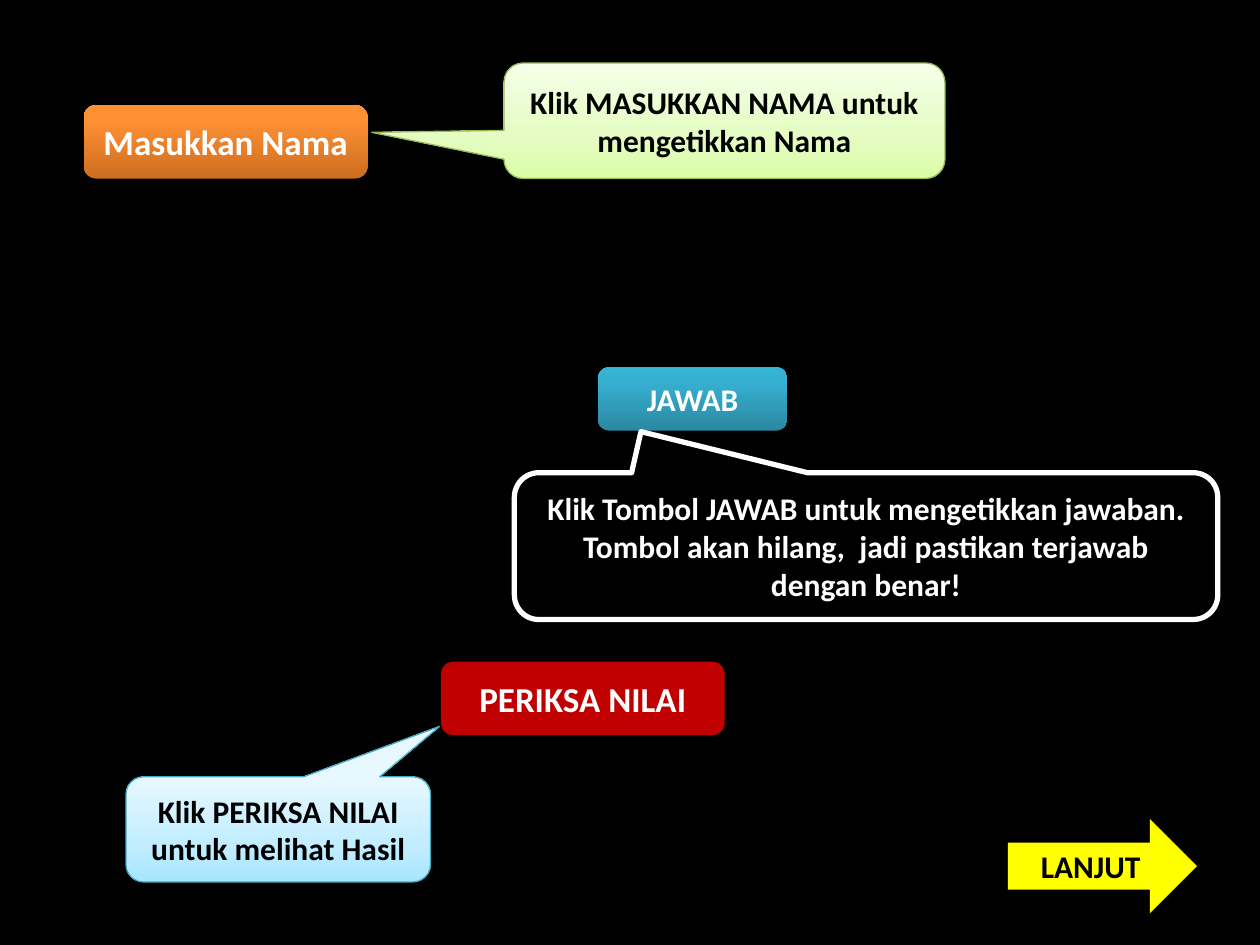
from copy import deepcopy

from pptx import Presentation
from pptx.dml.color import RGBColor
from pptx.enum import shapes, text
from pptx.oxml import ns
from pptx.util import Cm, Pt

BLACK = RGBColor(0x00, 0x00, 0x00)
WHITE = RGBColor(0xFF, 0xFF, 0xFF)
RED = RGBColor(0xC0, 0x00, 0x00)
YELLOW = RGBColor(0xFF, 0xFF, 0x00)
GREEN_EDGE = RGBColor(0x98, 0xB9, 0x55)
BLUE_EDGE = RGBColor(0x46, 0xAA, 0xC5)

TEAL_FADE = [(0, RGBColor(0x2A, 0x88, 0xA2)),
             (0.8, RGBColor(0x37, 0xB1, 0xD2)),
             (1, RGBColor(0x34, 0xB4, 0xD6))]
ORANGE_FADE = [(0, RGBColor(0xCC, 0x6E, 0x20)),
               (0.8, RGBColor(0xFF, 0x90, 0x34)),
               (1, RGBColor(0xFF, 0x91, 0x36))]
GREEN_FADE = [(0, RGBColor(0xDA, 0xFD, 0xA7)),
              (0.35, RGBColor(0xE4, 0xFC, 0xC2)),
              (1, RGBColor(0xF5, 0xFF, 0xE7))]
BLUE_FADE = [(0, RGBColor(0xA7, 0xE6, 0xFF)),
             (0.35, RGBColor(0xC1, 0xED, 0xFF)),
             (1, RGBColor(0xE7, 0xF8, 0xFF))]

FONT = "Calibri"


def paint(shape, colour):
    if isinstance(colour, RGBColor):
        shape.fill.solid()
        shape.fill.fore_color.rgb = colour
        return
    shape.fill.gradient()
    shape.fill.gradient_angle = 90
    stop_list = next(shape._element.spPr.iter(ns.qn("a:gsLst")))
    stop_list.append(deepcopy(stop_list[-1]))
    for stop, (position, shade) in zip(shape.fill.gradient_stops, colour):
        stop.position = position
        stop.color.rgb = shade


def add_label(slide, kind, box, wording, colour, ink, size=18):
    label = slide.shapes.add_shape(kind, *(Cm(length) for length in box))
    label.shadow.inherit = False
    label.line.fill.background()
    paint(label, colour)
    frame = label.text_frame
    frame.word_wrap = True
    frame.vertical_anchor = text.MSO_ANCHOR.MIDDLE
    frame.text = wording
    paragraph = frame.paragraphs[0]
    paragraph.alignment = text.PP_ALIGN.CENTER
    font = paragraph.runs[0].font
    font.name = FONT
    font.size = Pt(size)
    font.bold = True
    font.color.rgb = ink
    return label


def add_button(slide, box, wording, colour, size):
    add_label(slide, shapes.MSO_SHAPE.ROUNDED_RECTANGLE, box, wording,
              colour, WHITE, size)


def add_callout(slide, box, tip, wording, colour, ink, edge, width=0.75):
    callout = add_label(slide, shapes.MSO_SHAPE.ROUNDED_RECTANGULAR_CALLOUT,
                        box, wording, colour, ink)
    callout.adjustments[0], callout.adjustments[1] = tip
    callout.line.color.rgb = edge
    callout.line.width = Pt(width)


def main():
    deck = Presentation()
    deck.slide_width, deck.slide_height = Cm(25.4), Cm(19.05)
    slide = deck.slides.add_slide(deck.slide_layouts[6])
    slide.background.fill.solid()
    slide.background.fill.fore_color.rgb = BLACK

    add_button(slide, (12.06, 7.41, 3.81, 1.27), "JAWAB", TEAL_FADE, 18)
    add_button(slide, (1.69, 2.12, 5.72, 1.48), "Masukkan Nama",
               ORANGE_FADE, 20)
    add_button(slide, (8.89, 13.34, 5.72, 1.48), "PERIKSA NILAI", RED, 20)

    add_callout(slide, (10.16, 1.27, 8.89, 2.33), (-0.8, 0.1),
                "Klik MASUKKAN NAMA untuk mengetikkan Nama",
                GREEN_FADE, BLACK, GREEN_EDGE)
    add_callout(slide, (10.37, 9.53, 14.18, 2.96), (-0.32, -0.78),
                "Klik Tombol JAWAB untuk mengetikkan jawaban. "
                "Tombol akan hilang,  jadi pastikan terjawab dengan benar!",
                BLACK, WHITE, WHITE, 3)
    add_callout(slide, (2.54, 15.66, 6.14, 2.12), (0.53, -0.98),
                "Klik PERIKSA NILAI untuk melihat Hasil",
                BLUE_FADE, BLACK, BLUE_EDGE)

    add_label(slide, shapes.MSO_SHAPE.RIGHT_ARROW, (20.32, 16.51, 3.81, 1.9),
              "LANJUT", YELLOW, BLACK)
    deck.save("out.pptx")


if __name__ == "__main__":
    main()
